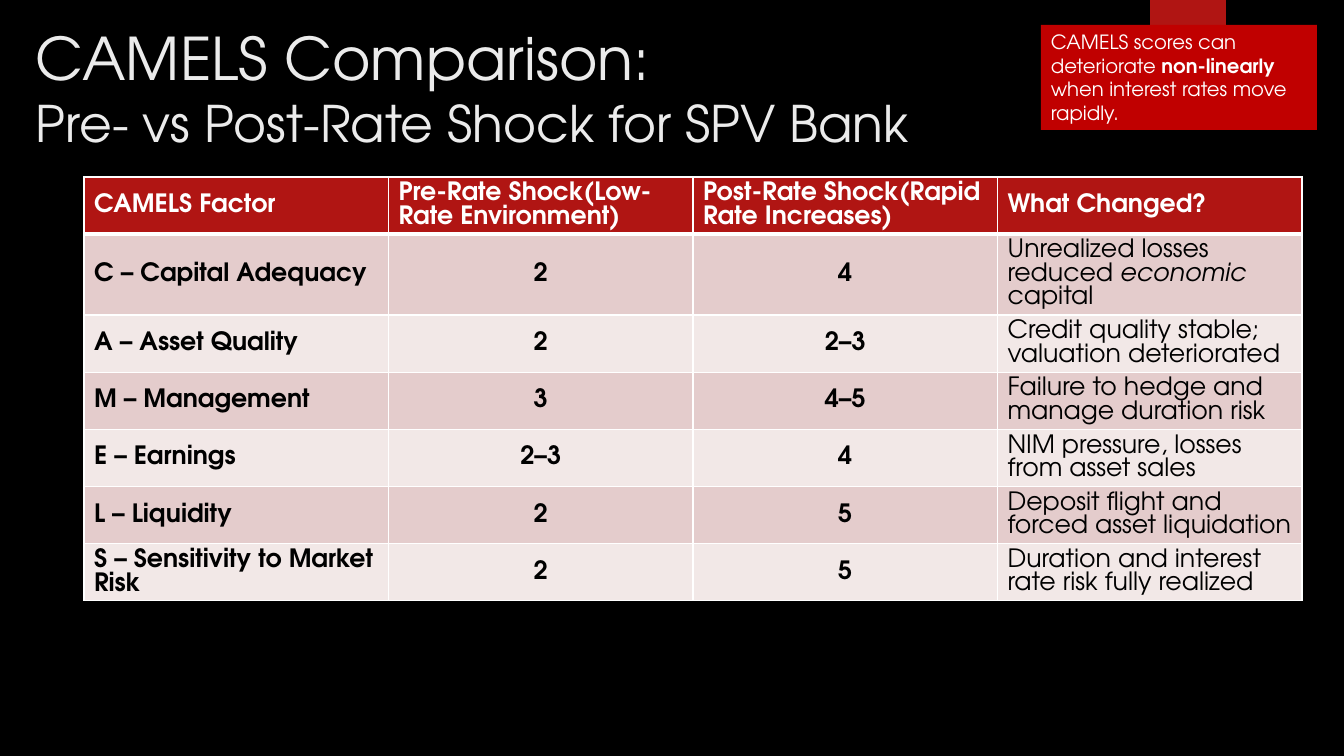
from lxml import etree
from pptx import Presentation
from pptx.dml.color import RGBColor
from pptx.enum.shapes import MSO_SHAPE
from pptx.enum.text import MSO_ANCHOR, PP_ALIGN
from pptx.oxml.ns import qn
from pptx.util import Emu, Pt

RECTANGLE = MSO_SHAPE.RECTANGLE
TOP, MIDDLE = MSO_ANCHOR.TOP, MSO_ANCHOR.MIDDLE
LEFT, CENTER = PP_ALIGN.LEFT, PP_ALIGN.CENTER

PX = 9071  # EMU per px, 100.8 px to the inch
FONT = "TeX Gyre Adventor"
COLORS = {
    "background": "000000",
    "title": "EBEBEB",
    "accent": "B01513",
    "callout": "C00000",
    "white": "FFFFFF",
    "body": "000000",
    "band_dark": "E4CCCC",
    "band_light": "F2E8E7",
}

HEADERS = ["CAMELS Factor", "Pre-Rate Shock(Low-Rate Environment)",
           "Post-Rate Shock(Rapid Rate Increases)", "What Changed?"]
FACTORS = [
    ("C – Capital Adequacy", "2", "4",
     [("Unrealized losses reduced ", {}), ("economic", {"italic": True}), (" capital", {})]),
    ("A – Asset Quality", "2", "2–3",
     [("Credit quality stable; valuation deteriorated", {})]),
    ("M – Management", "3", "4–5",
     [("Failure to hedge and manage duration risk", {})]),
    ("E – Earnings", "2–3", "4",
     [("NIM pressure, losses from asset sales", {})]),
    ("L – Liquidity", "2", "5",
     [("Deposit flight and forced asset liquidation", {})]),
    ("S – Sensitivity to Market Risk", "2", "5",
     [("Duration and interest rate risk fully realized", {})]),
]


def px(*lengths):
    return [Emu(length * PX) for length in lengths]


def rgb(color):
    return RGBColor.from_string(COLORS[color])


def fill_solid(target, color):
    target.fill.solid()
    target.fill.fore_color.rgb = rgb(color)


def add_run(paragraph, text, color, **font_format):
    run = paragraph.add_run()
    run.text = text
    run.font.color.rgb = rgb(color)
    for name, value in {"name": FONT, **font_format}.items():
        setattr(run.font, name, value)


def add_block(slide, box, color):
    block = slide.shapes.add_shape(RECTANGLE, *px(*box))
    block.shadow.inherit = False
    fill_solid(block, color)
    block.line.fill.background()
    return block


def add_title(slide, box):
    frame = slide.shapes.add_textbox(*px(*box)).text_frame
    frame.word_wrap = True
    frame.vertical_anchor = TOP
    heading = frame.paragraphs[0]
    add_run(heading, "CAMELS Comparison: ", "title", size=Pt(42))
    heading.add_line_break()
    add_run(heading, "Pre- vs Post-Rate Shock for SPV Bank", "title", size=Pt(36))


def add_callout(slide, box):
    """Red note with the tab that hangs behind it from the slide's top edge."""
    left, top, width, height = box
    add_block(slide, (left + 109, 0, 76, top + 101), "accent")
    frame = add_block(slide, box, "callout").text_frame
    frame.word_wrap = True
    frame.vertical_anchor = TOP
    note = frame.paragraphs[0]
    note.alignment = LEFT
    for text, bold in [("CAMELS scores can deteriorate ", False), ("non-linearly", True),
                       (" when interest rates move rapidly.", False)]:
        add_run(note, text, "white", size=Pt(14), bold=bold)


def set_borders(cell, widths):
    """Draw white edges; widths maps the edge letters L, R, T, B to points."""
    properties = cell._tc.get_or_add_tcPr()
    for position, (edge, width) in enumerate(widths.items()):
        line = etree.Element(qn(f"a:ln{edge}"), w=str(Pt(width)))
        solid = etree.SubElement(line, qn("a:solidFill"))
        etree.SubElement(solid, qn("a:srgbClr"), val=COLORS["white"])
        properties.insert(position, line)


def fill_cell(cell, runs, fill, color, bold, alignment):
    fill_solid(cell, fill)
    cell.vertical_anchor = MIDDLE
    paragraph = cell.text_frame.paragraphs[0]
    paragraph.alignment = alignment
    paragraph.line_spacing = Pt(16.8)
    for text, font_format in runs:
        add_run(paragraph, text, color, size=Pt(18), bold=bold, **font_format)


def add_ratings_table(slide, box, row_height):
    rows = [HEADERS, *FACTORS]
    table = slide.shapes.add_table(len(rows), len(HEADERS), *px(*box)).table
    for row in table.rows:
        row.height = px(row_height)[0]
    for r, row in enumerate(rows):
        is_header = r == 0
        band = "band_dark" if r % 2 else "band_light"
        for c, content in enumerate(row):
            cell = table.cell(r, c)
            fill_cell(
                cell,
                [(content, {})] if isinstance(content, str) else content,
                fill="accent" if is_header else band,
                color="white" if is_header else "body",
                bold=is_header or c < 3,
                alignment=CENTER if not is_header and c in (1, 2) else LEFT,
            )
            set_borders(cell, {"L": 1, "R": 1, "T": 3 if r == 1 else 1,
                               "B": 3 if is_header else 1})


def build_comparison_slide(presentation):
    slide = presentation.slides.add_slide(presentation.slide_layouts[6])
    fill_solid(slide.background, "background")
    add_title(slide, (26, 17, 1036, 154))
    add_ratings_table(slide, (84, 177, 1218, 287), row_height=41)
    add_callout(slide, (1041, 25, 276, 105))


def main():
    presentation = Presentation()
    presentation.slide_width, presentation.slide_height = px(1344, 756)
    build_comparison_slide(presentation)
    presentation.save("out.pptx")


if __name__ == "__main__":
    main()
